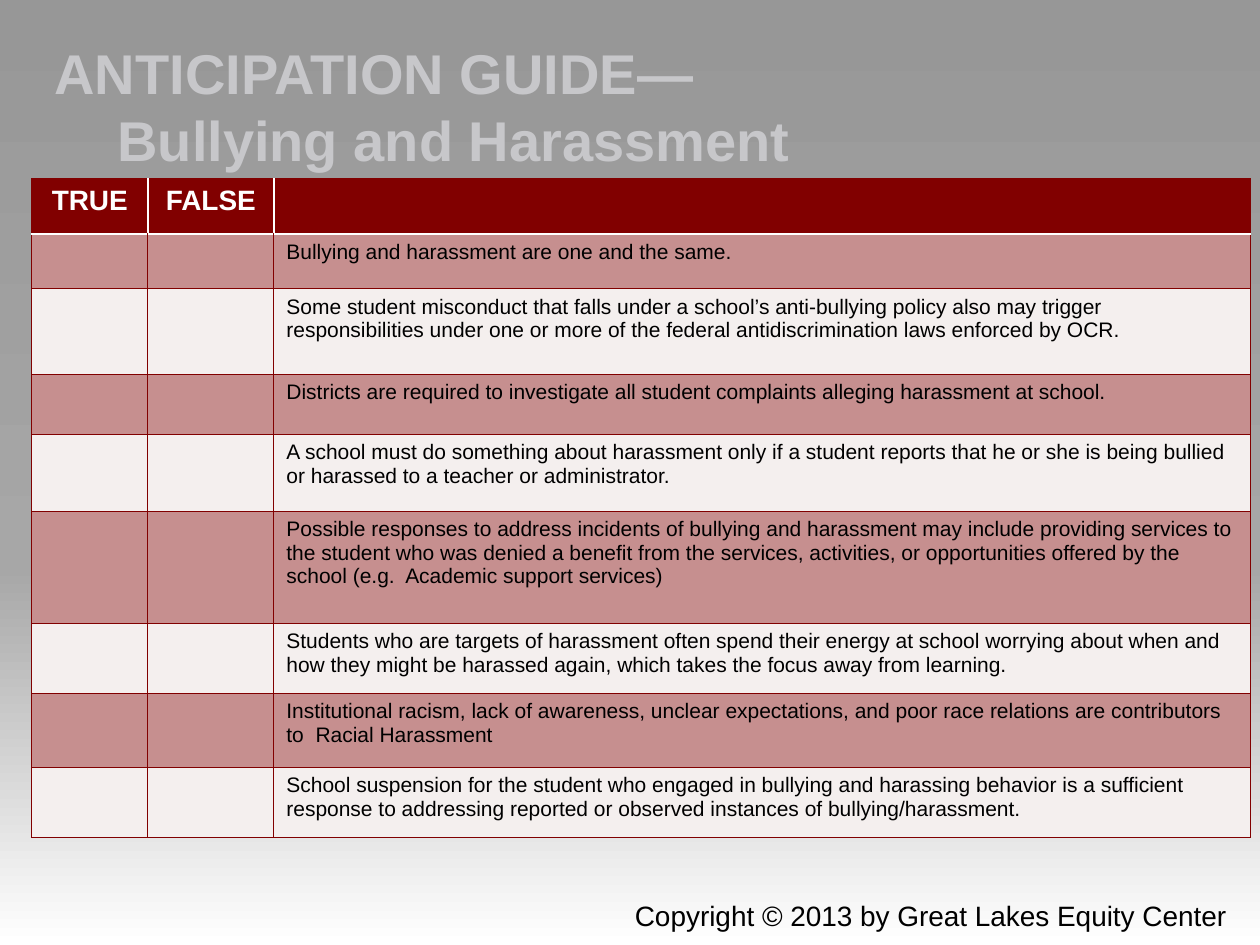
from copy import deepcopy

from lxml import etree
from pptx import Presentation
from pptx import util as u
from pptx.dml import color
from pptx.enum import text
from pptx.oxml import ns

TITLE = "ANTICIPATION GUIDE—\v\tBullying and Harassment"
COPYRIGHT = "Copyright © 2013 by Great Lakes Equity Center"
HEADERS = ["TRUE", "FALSE", ""]
STATEMENTS = [  # row height in cm, statement
    (1.11, "Bullying and harassment are one and the same."),
    (1.73, "Some student misconduct that falls under a school’s anti-bullying policy also may trigger "
           "responsibilities under one or more of the federal antidiscrimination laws enforced by OCR."),
    (1.21, "Districts are required to investigate all student complaints alleging harassment at school."),
    (1.55, "A school must do something about harassment only if a student reports that he or she is "
           "being bullied or harassed to a teacher or administrator."),
    (2.26, "Possible responses to address incidents of bullying and harassment may include providing "
           "services to the student who was denied a benefit from the services, activities, or "
           "opportunities offered by the school (e.g.  Academic support services)"),
    (1.41, "Students who are targets of harassment often spend their energy at school worrying about "
           "when and how they might be harassed again, which takes the focus away from learning."),
    (1.49, "Institutional racism, lack of awareness, unclear expectations, and poor race relations are "
           "contributors to  Racial Harassment"),
    (1.41, "School suspension for the student who engaged in bullying and harassing behavior is a "
           "sufficient response to addressing reported or observed instances of bullying/harassment."),
]
COLUMN_WIDTHS = [2.34, 2.54, 19.69]
HEADER_HEIGHT = 1.11
BACKGROUND = [(0, "979797"), (0.6, "A7A7A7"), (1, "FFFFFF")]
MAROON, ROSE, PALE, WHITE, BLACK = "810000", "C68F8F", "F4EFEE", "FFFFFF", "000000"


def rgb(value):
    return color.RGBColor.from_string(value)


def write(frame, content, size, fill, bold=False, align=text.PP_ALIGN.LEFT):
    paragraph = frame.paragraphs[0]
    paragraph.text = content
    paragraph.alignment = align
    for run in paragraph.runs:
        run.font.name = "Arial"
        run.font.size = u.Pt(size)
        run.font.bold = bold
        run.font.color.rgb = rgb(fill)


def add_text(slide, box, content, anchor=text.MSO_ANCHOR.TOP, **style):
    frame = slide.shapes.add_textbox(*(u.Cm(length) for length in box)).text_frame
    frame.word_wrap = True
    frame.vertical_anchor = anchor
    write(frame, content, **style)


def set_borders(cell, borders):
    """Draw the sides given as {side: (colour, points)}; call before filling the cell."""
    properties = cell._tc.get_or_add_tcPr()
    for side in "LRTB":
        if side in borders:
            line_color, points = borders[side]
            line = etree.SubElement(properties, ns.qn(f"a:ln{side}"), w=str(u.Pt(points)))
            solid = etree.SubElement(line, ns.qn("a:solidFill"))
            etree.SubElement(solid, ns.qn("a:srgbClr"), val=line_color)


def paint_background(slide):
    fill = slide.background.fill
    fill.gradient()
    fill.gradient_angle = 270
    stop_list = fill._fill._gradFill.gsLst
    stop_list.insert(1, deepcopy(stop_list[0]))
    for stop, (position, value) in zip(fill.gradient_stops, BACKGROUND):
        stop.position = position
        stop.color.rgb = rgb(value)


def add_guide_table(slide, left, top):
    heights = [HEADER_HEIGHT] + [height for height, _ in STATEMENTS]
    frame = slide.shapes.add_table(len(heights), len(COLUMN_WIDTHS), u.Cm(left), u.Cm(top),
                                   u.Cm(sum(COLUMN_WIDTHS)), u.Cm(sum(heights)))
    table = frame.table
    for column, width in zip(table.columns, COLUMN_WIDTHS):
        column.width = u.Cm(width)
    for row, height in zip(table.rows, heights):
        row.height = u.Cm(height)

    thin, rule = (MAROON, 0.75), (WHITE, 1.5)
    last = len(HEADERS) - 1
    for index, header in enumerate(HEADERS):
        cell = table.cell(0, index)
        borders = {"T": thin, "B": rule}
        if index == 0:
            borders["L"] = thin
        if index == last:
            borders["R"] = thin
        set_borders(cell, borders)
        cell.fill.solid()
        cell.fill.fore_color.rgb = rgb(MAROON)
        if header:
            write(cell.text_frame, header, 16, WHITE, bold=True, align=text.PP_ALIGN.CENTER)

    for number, (_, statement) in enumerate(STATEMENTS, start=1):
        for index in range(len(HEADERS)):
            cell = table.cell(number, index)
            set_borders(cell, {"L": thin, "R": thin, "T": rule if number == 1 else thin, "B": thin})
            cell.fill.solid()
            cell.fill.fore_color.rgb = rgb(ROSE if number % 2 else PALE)
        write(table.cell(number, last).text_frame, statement, 12, BLACK)


def main():
    presentation = Presentation()
    presentation.slide_width, presentation.slide_height = u.Cm(25.4), u.Cm(19.05)
    slide = presentation.slides.add_slide(presentation.slide_layouts[6])
    paint_background(slide)
    add_text(slide, (0.85, 0.64, 22.86, 2.96), TITLE, anchor=text.MSO_ANCHOR.MIDDLE,
             size=32, fill="C7C7CA", bold=True)
    add_guide_table(slide, 0.64, 3.6)
    add_text(slide, (11.43, 17.99, 13.55, 0.94), COPYRIGHT, size=16, fill=BLACK,
             align=text.PP_ALIGN.RIGHT)
    presentation.save("out.pptx")


if __name__ == "__main__":
    main()
